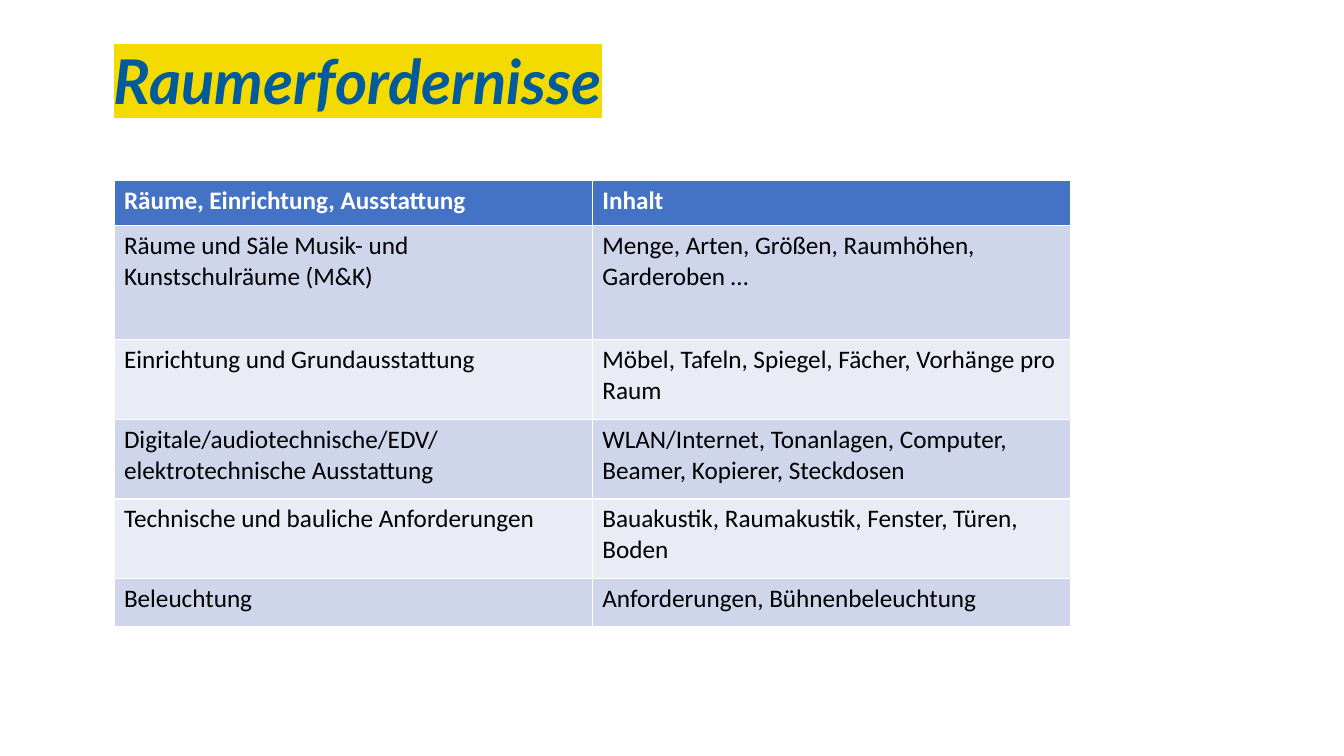
from dataclasses import dataclass

from lxml.etree import SubElement
from pptx import Presentation
from pptx.dml.color import RGBColor
from pptx.enum.text import MSO_ANCHOR
from pptx.oxml.ns import qn
from pptx.util import Inches, Pt


@dataclass(frozen=True)
class Theme:
    title: str = "005A9B"
    marker: str = "F3DB00"
    head: str = "4472C4"
    bands: tuple = ("CFD5EA", "E9EBF5")
    light: str = "FFFFFF"
    dark: str = "000000"
    title_font: str = "Lato"
    body_font: str = "Calibri"
    title_size: int = 44
    body_size: int = 18


THEME = Theme()
WIDTH, HEIGHT = 13.33, 7.5
LEFT = 1.13
ROWS = [
    ("Räume, Einrichtung, Ausstattung", "Inhalt"),
    ("Räume und Säle Musik- und Kunstschulräume (M&K)",
     "Menge, Arten, Größen, Raumhöhen, Garderoben …"),
    ("Einrichtung und Grundausstattung",
     "Möbel, Tafeln, Spiegel, Fächer, Vorhänge pro Raum"),
    ("Digitale/audiotechnische/EDV/ elektrotechnische Ausstattung",
     "WLAN/Internet, Tonanlagen, Computer, Beamer, Kopierer, Steckdosen"),
    ("Technische und bauliche Anforderungen",
     "Bauakustik, Raumakustik, Fenster, Türen, Boden"),
    ("Beleuchtung", "Anforderungen, Bühnenbeleuchtung"),
]
TALLS = (0.45, 1.13, 0.79, 0.79, 0.79, 0.48)


def style(font, name, size, color, bold):
    font.name, font.size, font.bold = name, Pt(size), bold
    font.color.rgb = RGBColor.from_string(color)


def mark(run, color):
    """Highlight a run; the schema wants the marker ahead of the typeface."""
    props = run.font._element if hasattr(run.font, "_element") else run._r.get_or_add_rPr()
    light = SubElement(props, qn("a:highlight"))
    SubElement(light, qn("a:srgbClr"), val=color)
    props.find(qn("a:latin")).addprevious(light)


def add_title(slide, box, text):
    frame = slide.shapes.add_textbox(*map(Inches, box)).text_frame
    frame.word_wrap = True
    frame.vertical_anchor = MSO_ANCHOR.BOTTOM
    frame.margin_left = frame.margin_right = 0
    frame.margin_top = frame.margin_bottom = 0
    para = frame.paragraphs[0]
    para.line_spacing = 0.9
    run = para.add_run()
    run.text = text
    style(run.font, THEME.title_font, THEME.title_size, THEME.title, True)
    run.font.italic = True
    mark(run, THEME.marker)


def add_grid(slide, box, rows, talls):
    """Table with equal columns; the built-in style supplies white rules."""
    table = slide.shapes.add_table(len(rows), len(rows[0]), *map(Inches, box)).table
    for col in table.columns:
        col.width = Inches(box[2] / len(rows[0]))
    for i, (texts, tall) in enumerate(zip(rows, talls)):
        head = i == 0
        table.rows[i].height = Inches(tall)
        fill = THEME.head if head else THEME.bands[(i - 1) % 2]
        for cell, text in zip(table.rows[i].cells, texts):
            cell.text = text
            cell.fill.solid()
            cell.fill.fore_color.rgb = RGBColor.from_string(fill)
            style(cell.text_frame.paragraphs[0].font, THEME.body_font,
                  THEME.body_size, THEME.light if head else THEME.dark, head)


def main():
    deck = Presentation()
    deck.slide_width, deck.slide_height = Inches(WIDTH), Inches(HEIGHT)
    slide = deck.slides.add_slide(deck.slide_layouts[6])
    add_title(slide, (LEFT, 0.37, 9.28, 0.8), "Raumerfordernisse")
    add_grid(slide, (LEFT, 1.79, 9.49, sum(TALLS)), ROWS, TALLS)
    deck.save("out.pptx")


if __name__ == "__main__":
    main()
